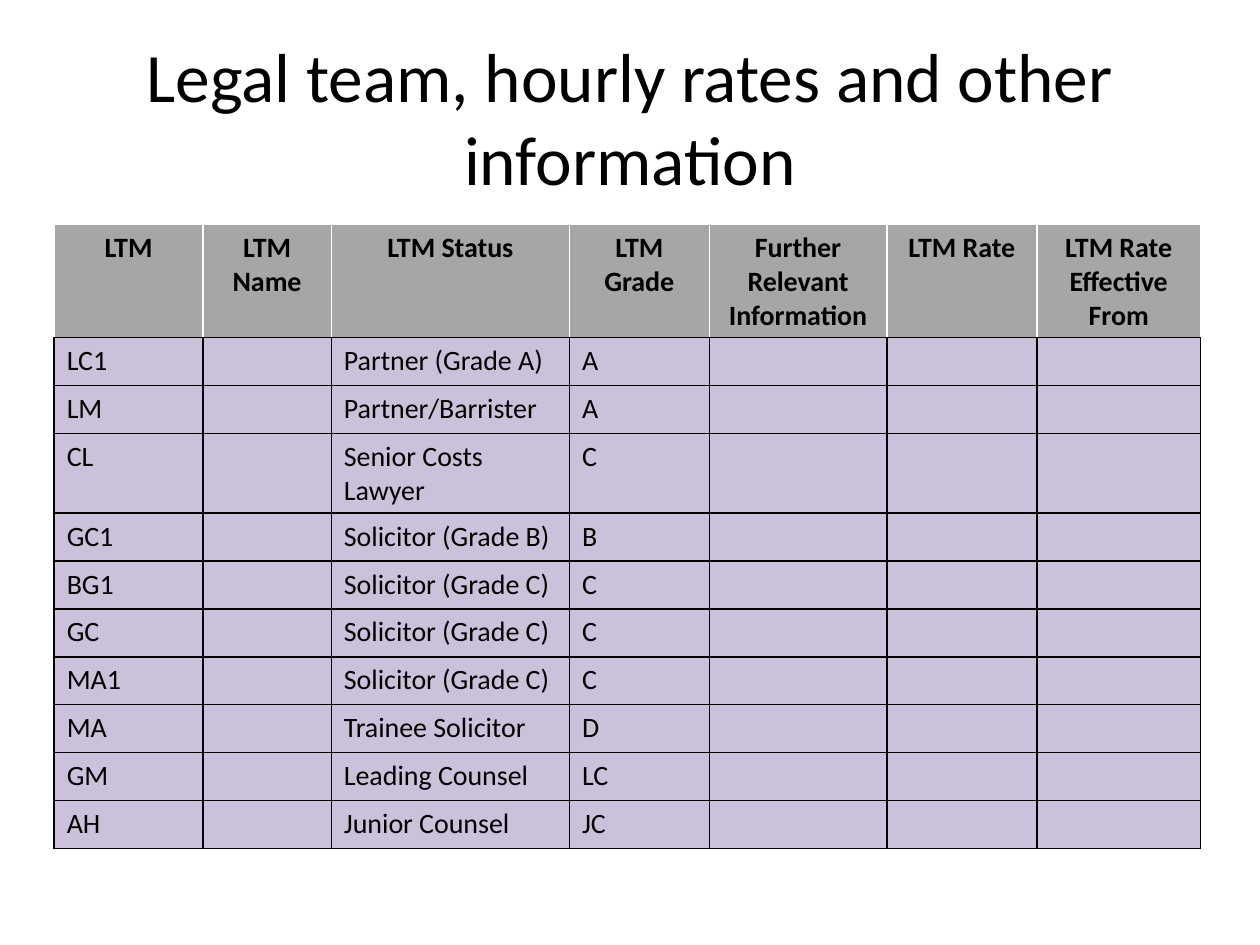
"""Build the legal team and hourly rates slide."""
from dataclasses import dataclass

import pptx
import pptx.dml.color
import pptx.enum.text
import pptx.oxml
import pptx.oxml.ns
import pptx.util

Inches = pptx.util.Inches
RGBColor = pptx.dml.color.RGBColor
PP_ALIGN = pptx.enum.text.PP_ALIGN

BLACK = RGBColor(0x00, 0x00, 0x00)
WHITE = RGBColor(0xFF, 0xFF, 0xFF)
GREY = RGBColor(0xA6, 0xA6, 0xA6)
LILAC = RGBColor(0xCC, 0xC1, 0xDA)
FONT = "Calibri"
CELL_SIZE = 16


@dataclass(frozen=True)
class Member:
    code: str
    status: str
    grade: str
    height: float = 0.38


@dataclass(frozen=True)
class CellStyle:
    fill: RGBColor
    bold: bool
    align: PP_ALIGN
    borders: dict[str, RGBColor]


COLUMNS = {
    "LTM": 1.18,
    "LTM Name": 1.02,
    "LTM Status": 1.89,
    "LTM Grade": 1.11,
    "Further Relevant Information": 1.41,
    "LTM Rate": 1.19,
    "LTM Rate Effective From": 1.3,
}
HEADER_HEIGHT = 0.9
MEMBERS = [
    Member("LC1", "Partner (Grade A)", "A"),
    Member("LM", "Partner/Barrister", "A"),
    Member("CL", "Senior Costs Lawyer", "C", 0.63),
    Member("GC1", "Solicitor (Grade B)", "B"),
    Member("BG1", "Solicitor (Grade C)", "C"),
    Member("GC", "Solicitor (Grade C)", "C"),
    Member("MA1", "Solicitor (Grade C)", "C"),
    Member("MA", "Trainee Solicitor", "D"),
    Member("GM", "Leading Counsel", "LC"),
    Member("AH", "Junior Counsel", "JC"),
]
HEADER = CellStyle(GREY, True, PP_ALIGN.CENTER,
                   {"L": WHITE, "R": WHITE, "T": WHITE, "B": BLACK})
BODY = CellStyle(LILAC, False, PP_ALIGN.LEFT, dict.fromkeys("LRTB", BLACK))


def write(p, text: str, align: PP_ALIGN, size: float, bold: bool = False) -> None:
    """Write one formatted run into a paragraph."""
    p.alignment = align
    r = p.add_run()
    r.text = text
    r.font.color.rgb = BLACK
    formats = {"name": FONT, "size": pptx.util.Pt(size), "bold": bold}
    for name, value in formats.items():
        setattr(r.font, name, value)


def set_borders(cell, borders: dict[str, RGBColor]) -> None:
    """Put one-point lines on the sides of a cell, ahead of its fill."""
    props = cell._tc.get_or_add_tcPr()
    for i, (side, color) in enumerate(borders.items()):
        props.insert(i, pptx.oxml.parse_xml(
            f'<a:ln{side} {pptx.oxml.ns.nsdecls("a")} w="{pptx.util.Pt(1)}">'
            f'<a:solidFill><a:srgbClr val="{color}"/></a:solidFill></a:ln{side}>'))


def draw_cell(cell, text: str, style: CellStyle) -> None:
    """Fill, border and write one table cell."""
    cell.fill.solid()
    cell.fill.fore_color.rgb = style.fill
    set_borders(cell, style.borders)
    p = cell.text_frame.paragraphs[0]
    if text:
        write(p, text, style.align, CELL_SIZE, style.bold)
    else:
        p._p.append(pptx.oxml.parse_xml(
            f'<a:endParaRPr {pptx.oxml.ns.nsdecls("a")} sz="{CELL_SIZE * 100}">'
            f'<a:latin typeface="{FONT}"/></a:endParaRPr>'))


def draw_title(s, text: str) -> None:
    """Draw the centred slide title."""
    sp = s.shapes.add_textbox(Inches(0.5), Inches(0.3), Inches(9), Inches(1.25))
    tf = sp.text_frame
    tf.word_wrap = True
    tf.vertical_anchor = pptx.enum.text.MSO_ANCHOR.MIDDLE
    write(tf.paragraphs[0], text, PP_ALIGN.CENTER, 39.6)


def draw_table(s, members: list[Member]) -> None:
    """Draw the header and one row for each team member."""
    heights = [HEADER_HEIGHT] + [m.height for m in members]
    table = s.shapes.add_table(
        len(heights), len(COLUMNS), Inches(0.43), Inches(1.78),
        Inches(sum(COLUMNS.values())), Inches(sum(heights))).table
    for column, width in zip(table.columns, COLUMNS.values()):
        column.width = Inches(width)
    for row, height in zip(table.rows, heights):
        row.height = Inches(height)
    rows = [list(COLUMNS)]
    rows += [[m.code, "", m.status, m.grade, "", "", ""] for m in members]
    for i, texts in enumerate(rows):
        for j, text in enumerate(texts):
            draw_cell(table.cell(i, j), text, BODY if i else HEADER)


def main() -> None:
    """Build and save the presentation."""
    prs = pptx.Presentation()
    prs.slide_width = Inches(10)
    prs.slide_height = Inches(7.5)
    s = prs.slides.add_slide(prs.slide_layouts[6])
    draw_title(s, "Legal team, hourly rates and other information")
    draw_table(s, MEMBERS)
    prs.save("out.pptx")


if __name__ == "__main__":
    main()
